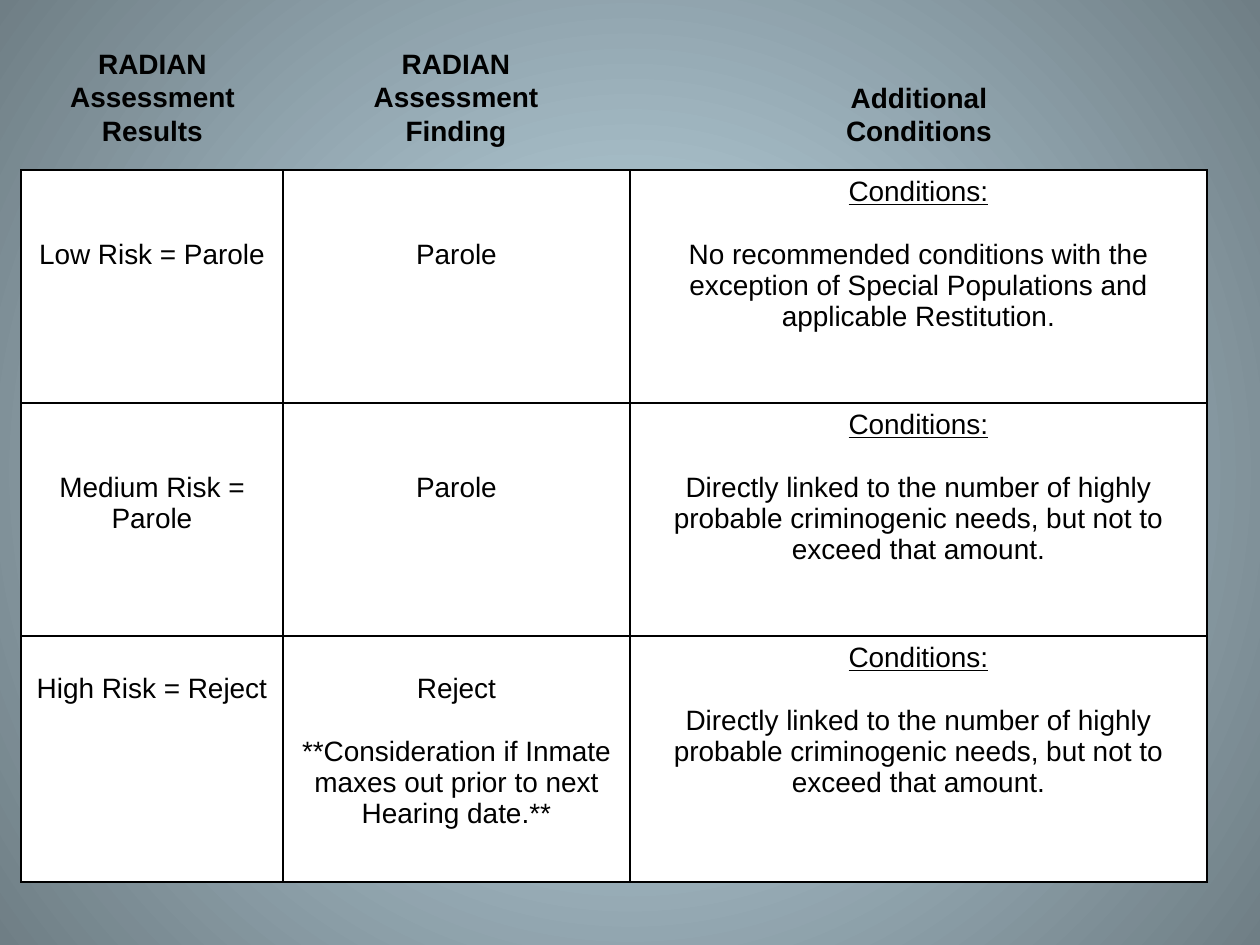
"""Build the slide that links assessment results to findings and conditions."""
from lxml import etree
from pptx import Presentation
from pptx import util as u
from pptx.dml.color import RGBColor
from pptx.enum import text
from pptx.oxml import ns, parse_xml

PX = 914400 / 126
LINE_GAP = u.Pt(18)


def px(*lengths):
    return [u.Emu(round(length * PX)) for length in lengths]


def format_text(frame, bold):
    for paragraph in frame.paragraphs:
        paragraph.alignment = text.PP_ALIGN.CENTER
        for run in paragraph.runs:
            run.font.name = "Arial"
            run.font.size = u.Pt(16)
            run.font.bold = bold
            run.font.color.rgb = RGBColor.from_string("000000")


presentation = Presentation()
presentation.slide_width, presentation.slide_height = px(1260, 945)
slide = presentation.slides.add_slide(presentation.slide_layouts[6])

backdrop = slide.background.fill
backdrop.gradient()
for stop, color in zip(backdrop.gradient_stops, ("C5E0ED", "6F7E85")):
    stop.color.rgb = RGBColor.from_string(color)
direction = next(slide.element.iter(ns.qn("a:lin")))
direction.getparent().replace(direction, parse_xml(
    f'<a:path {ns.nsdecls("a")} path="circle">'
    '<a:fillToRect l="50000" t="50000" r="50000" b="50000"/></a:path>'))

column_widths = px(262, 347, 577)
row_heights = px(233, 233, 246)
linked_needs = ("Directly linked to the number of highly probable criminogenic needs, "
                "but not to exceed that amount.")
no_conditions = ("No recommended conditions with the exception of Special Populations "
                 "and applicable Restitution.")
reject_finding = "Reject\n**Consideration if Inmate maxes out prior to next Hearing date.**"
risk_levels = [
    (2, "Low Risk = Parole", "Parole", no_conditions),
    (2, "Medium Risk = Parole", "Parole", linked_needs),
    (1, "High Risk = Reject", reject_finding, linked_needs),
]

risk_table = slide.shapes.add_table(
    3, 3, *px(21, 170), sum(column_widths), sum(row_heights)).table
risk_table.first_row = risk_table.horz_banding = False
for column, width in zip(risk_table.columns, column_widths):
    column.width = width
for row, height, (lead_lines, result, finding, conditions) in zip(
        risk_table.rows, row_heights, risk_levels):
    row.height = height
    entries = (result, finding, "Conditions:\n" + conditions)
    for cell, entry, lead in zip(row.cells, entries, (lead_lines, lead_lines, 0)):
        cell.text_frame.text = entry
        cell.margin_top = u.Inches(0.05) + lead * LINE_GAP
        format_text(cell.text_frame, False)
        for paragraph in cell.text_frame.paragraphs[1:]:
            paragraph.space_before = LINE_GAP
        properties = cell._tc.get_or_add_tcPr()
        for side in ("lnL", "lnR", "lnT", "lnB"):
            border = etree.SubElement(properties, ns.qn(f"a:{side}"), w=str(u.Pt(1)))
            ink = etree.SubElement(border, ns.qn("a:solidFill"))
            etree.SubElement(ink, ns.qn("a:srgbClr"), val="000000")
        cell.fill.solid()
        cell.fill.fore_color.rgb = RGBColor.from_string("FFFFFF")
    row.cells[2].text_frame.paragraphs[0].runs[0].font.underline = True

headings = [
    ("RADIAN\nAssessment Results", 53, 40, 199, 115),
    ("RADIAN Assessment Finding", 325, 40, 262, 115),
    ("Additional Conditions", 798, 74, 242, 81),
]
for wording, *place in headings:
    heading = slide.shapes.add_textbox(*px(*place)).text_frame
    heading.text = wording
    heading.word_wrap = True
    heading.auto_size = text.MSO_AUTO_SIZE.SHAPE_TO_FIT_TEXT
    format_text(heading, True)

presentation.save("out.pptx")
